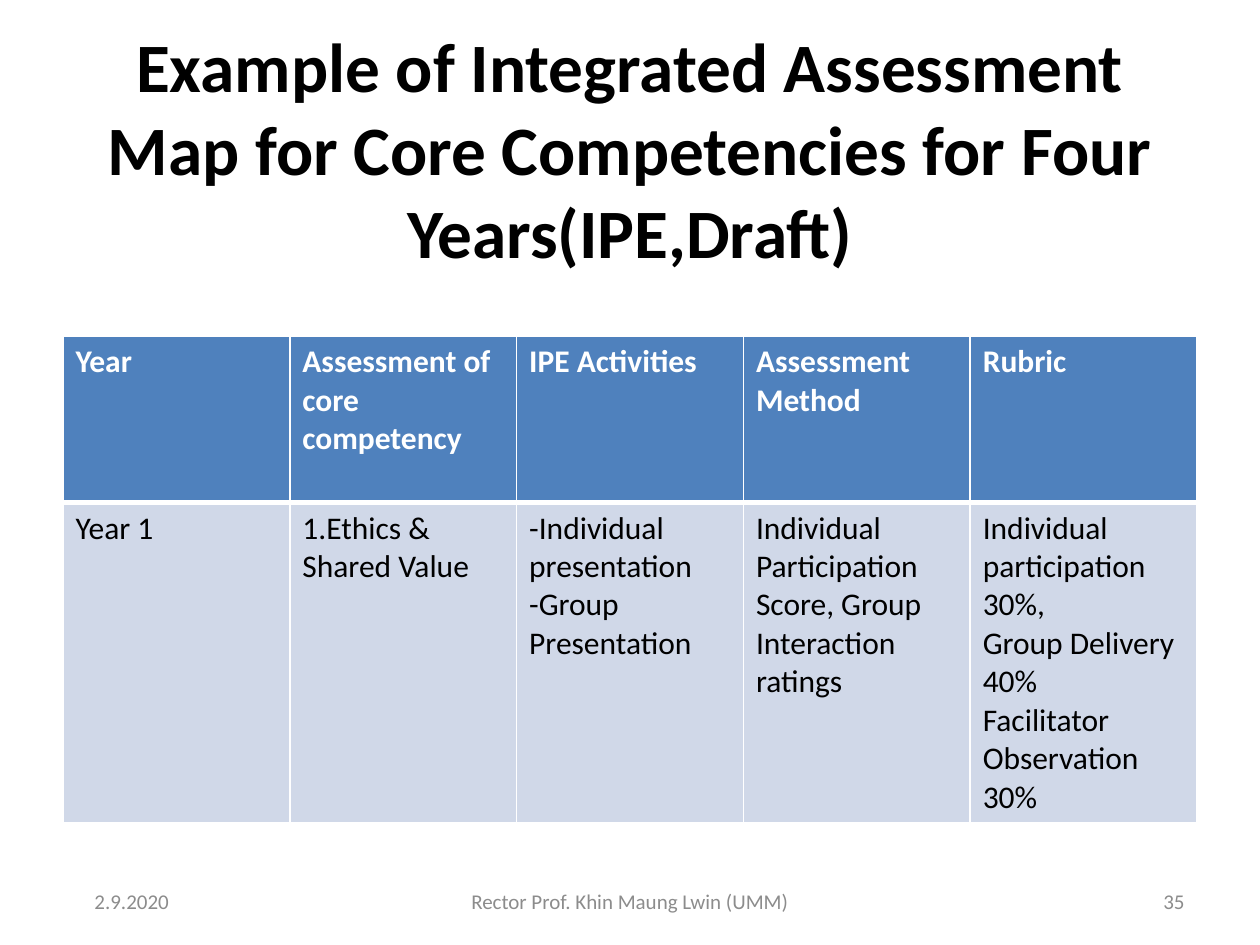
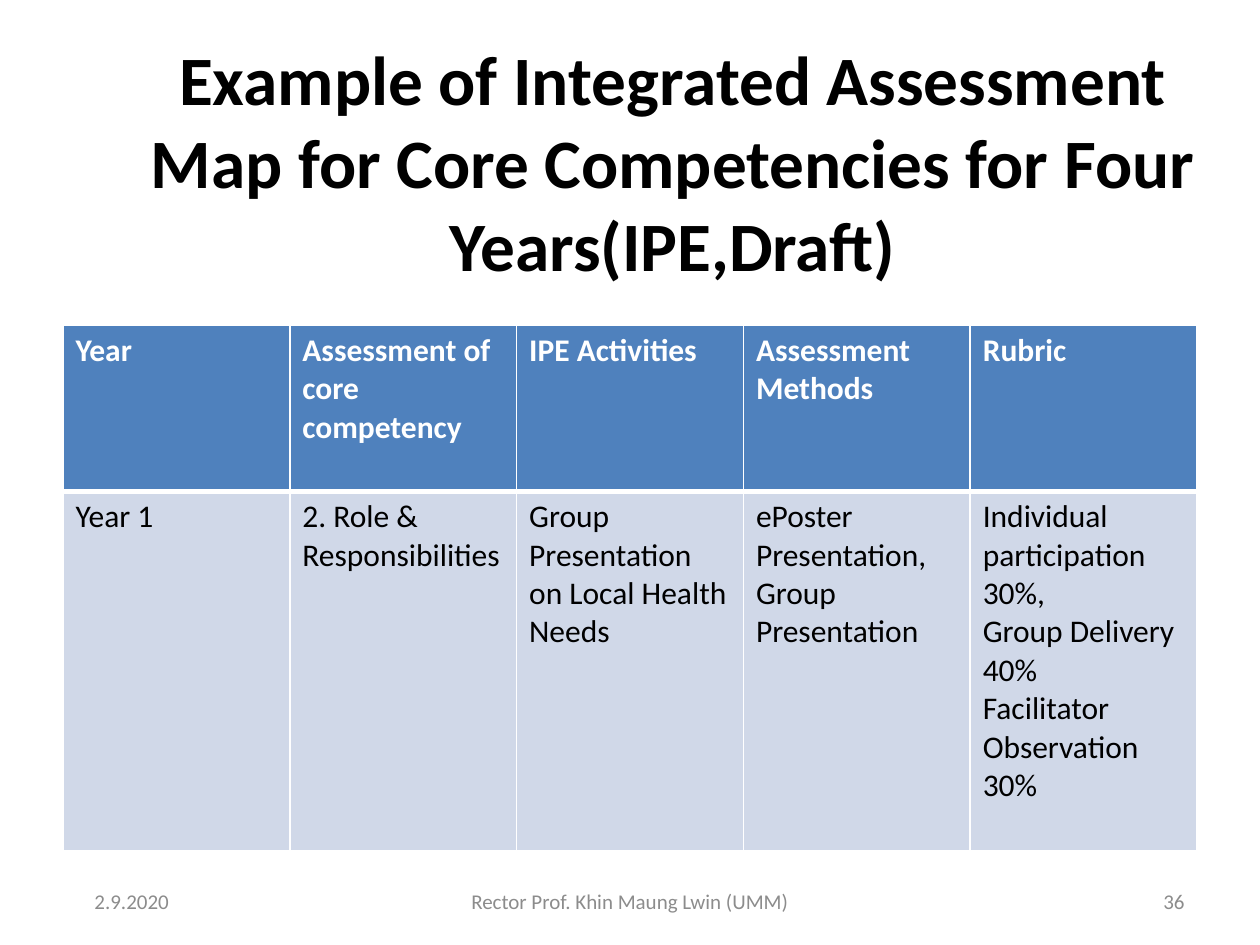
from lxml.etree import SubElement
from pptx import Presentation
from pptx.dml.color import RGBColor
from pptx.enum.text import MSO_ANCHOR, PP_ALIGN
from pptx.oxml.ns import qn
from pptx.util import Inches, Pt

COLORS = {
    "ink": "000000",
    "white": "FFFFFF",
    "head": "4F81BD",
    "body": "D0D8E8",
    "muted": "8C8C8C",
}
FONT = "Calibri"
TITLE = ("Example of Integrated Assessment Map for Core Competencies "
         "for Four Years(IPE,Draft)")
RUBRIC = ("Individual participation 30%,\nGroup Delivery 40%\n"
          "Facilitator Observation\n30%")
PAGES = [
    {
        "number": "35",
        "title": (0.5, 0.55, 9, 1.25),
        "table": (0.5, 2.67, 9, 3.86),
        "method": "Assessment Method",
        "cells": ["Year 1", "1.Ethics & Shared Value",
                  "-Individual presentation\n-Group Presentation",
                  "Individual Participation Score, Group Interaction ratings",
                  RUBRIC],
    },
    {
        "number": "36",
        "title": (0.84, 0.65, 9, 1.25),
        "table": (0.5, 2.58, 9, 4.17),
        "method": "Assessment Methods",
        "cells": ["Year 1", "2. Role & Responsibilities",
                  "Group Presentation on Local Health Needs",
                  "ePoster Presentation,\nGroup Presentation",
                  RUBRIC],
    },
]
HEAD_HIGH = 1.32


def color(name):
    return RGBColor.from_string(COLORS[name])


def write(frame, text, size=18, ink="ink", bold=False, align=PP_ALIGN.LEFT):
    frame.word_wrap = True
    for i, line in enumerate(text.split("\n")):
        para = frame.paragraphs[0] if i == 0 else frame.add_paragraph()
        para.alignment = align
        run = para.add_run()
        run.text = line
        font = run.font
        font.name, font.size, font.bold = FONT, Pt(size), bold
        font.color.rgb = color(ink)


def add_text(slide, box, text, indent=0.1, **style):
    frame = slide.shapes.add_textbox(*map(Inches, box)).text_frame
    frame.vertical_anchor = MSO_ANCHOR.MIDDLE
    frame.margin_left = Inches(indent)
    write(frame, text, **style)


def add_edges(cell, **widths):
    props = cell._tc.get_or_add_tcPr()
    for side in "LRTB":
        line = SubElement(props, qn(f"a:ln{side}"),
                          w=str(Pt(widths.get(side, 1))))
        fill = SubElement(line, qn("a:solidFill"))
        SubElement(fill, qn("a:srgbClr"), val=COLORS["white"])


def add_cell(cell, text, fill, edges, **style):
    add_edges(cell, **edges)
    cell.fill.solid()
    cell.fill.fore_color.rgb = color(fill)
    write(cell.text_frame, text, **style)


def add_map(slide, box, method, cells):
    heads = ["Year", "Assessment of core competency", "IPE Activities",
             method, "Rubric"]
    width, height = box[2:]
    grid = slide.shapes.add_table(2, len(heads), *map(Inches, box)).table
    grid.horz_banding = False
    for col in grid.columns:
        col.width = Inches(width / len(heads))
    for row, high in zip(grid.rows, (HEAD_HIGH, height - HEAD_HIGH)):
        row.height = Inches(high)
    for i, (head, body) in enumerate(zip(heads, cells)):
        add_cell(grid.cell(0, i), head, "head", {"B": 3},
                 ink="white", bold=True)
        add_cell(grid.cell(1, i), body, "body", {"T": 3})


def add_footer(slide, box, number):
    left, top, width, height = box
    side, mid = 2.33, 3.17
    style = {"size": 12, "ink": "muted"}
    add_text(slide, (left, top, side, height), "2.9.2020",
             indent=0.25, **style)
    add_text(slide, (left + (width - mid) / 2, top, mid, height),
             "Rector Prof. Khin Maung Lwin (UMM)",
             align=PP_ALIGN.CENTER, **style)
    add_text(slide, (left + width - side, top, side, height), number,
             align=PP_ALIGN.RIGHT, **style)


def add_page(deck, page):
    slide = deck.slides.add_slide(deck.slide_layouts[6])
    add_text(slide, page["title"], TITLE, size=39.6, bold=True,
             align=PP_ALIGN.CENTER)
    add_map(slide, page["table"], page["method"], page["cells"])
    add_footer(slide, (0.5, 6.95, 9, 0.4), page["number"])


def main():
    deck = Presentation()
    deck.slide_width, deck.slide_height = Inches(10), Inches(7.5)
    for page in PAGES:
        add_page(deck, page)
    deck.save("out.pptx")


if __name__ == "__main__":
    main()
